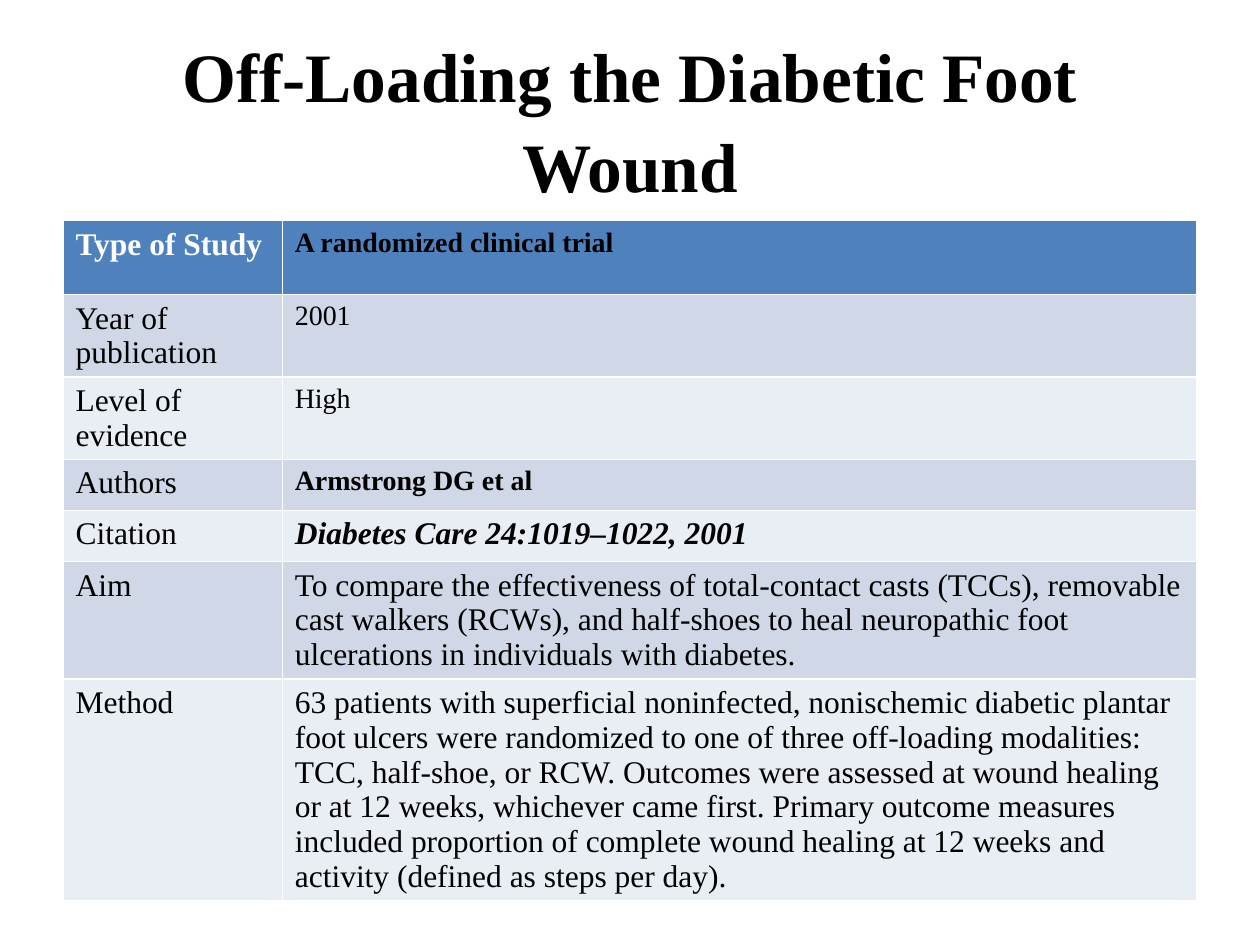
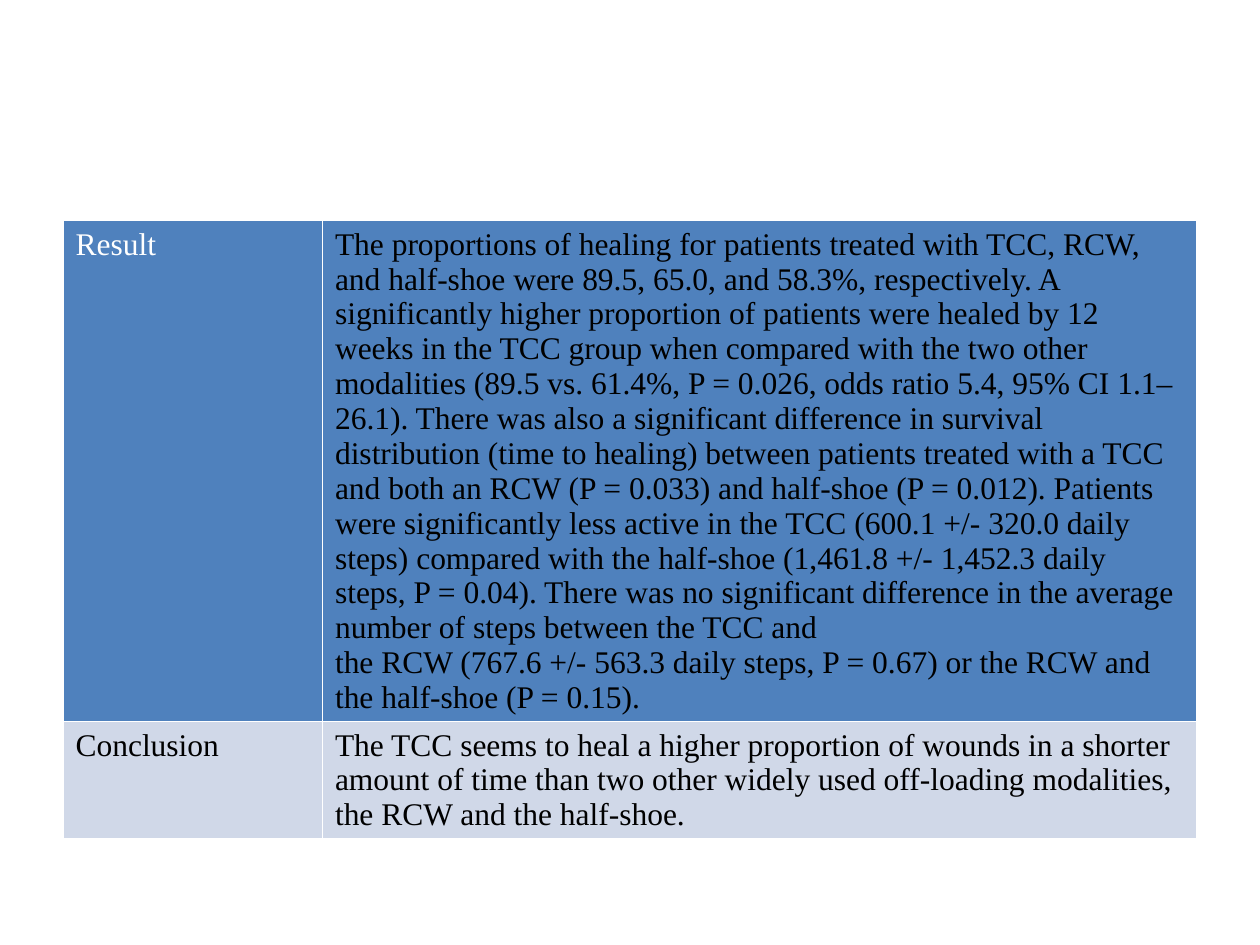
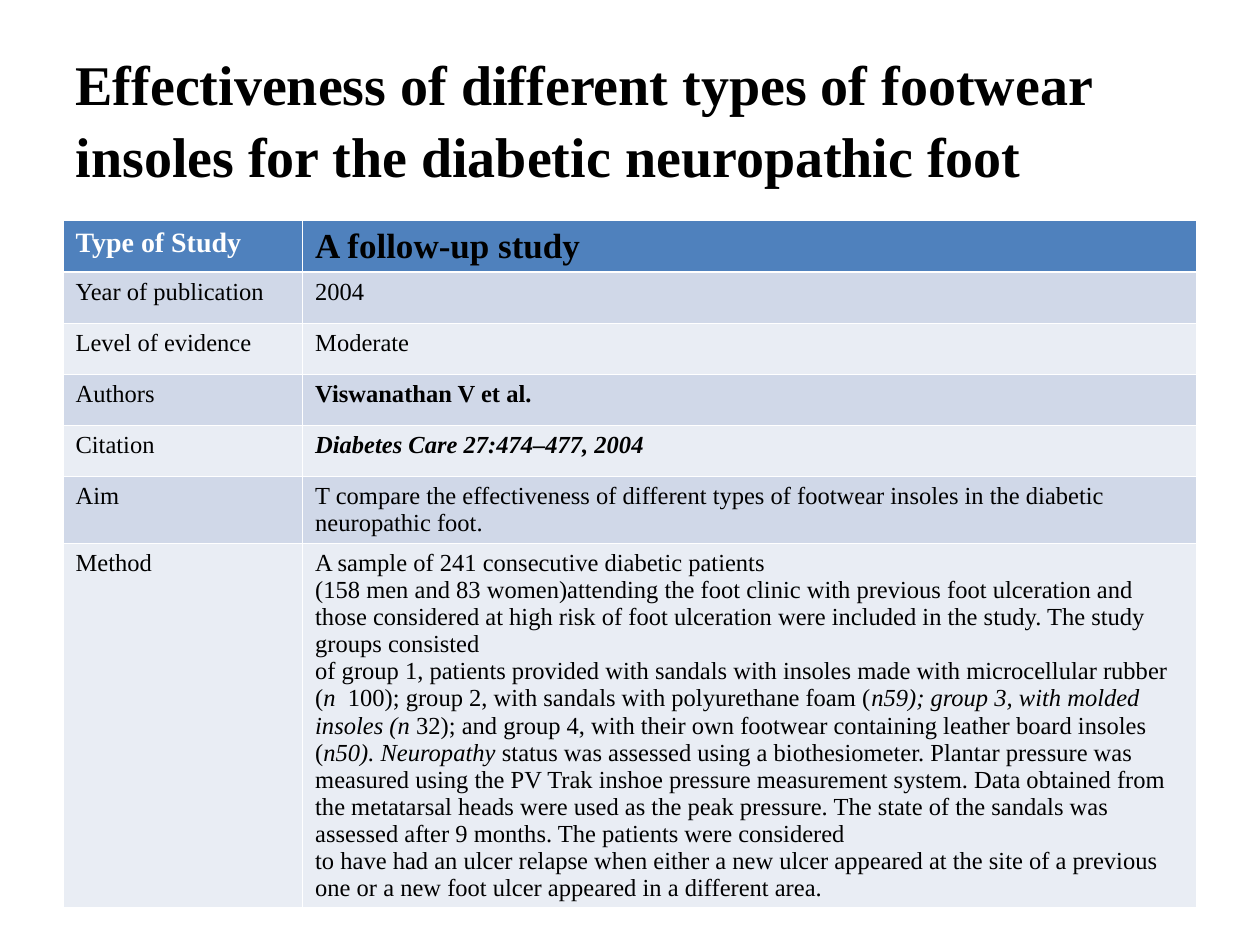
from pptx import Presentation
from pptx.dml.color import RGBColor
from pptx.enum.text import MSO_ANCHOR, MSO_AUTO_SIZE, PP_ALIGN
from pptx.util import Cm, Pt

CENTER, LEFT = PP_ALIGN.CENTER, PP_ALIGN.LEFT
MIDDLE, NO_FIT = MSO_ANCHOR.MIDDLE, MSO_AUTO_SIZE.NONE
TITLE_ONLY, BLANK = 5, 6
FONT = "Times New Roman"
ITALIC_MARK = "*"
BLACK, WHITE = "000000", "FFFFFF"
HEADER, BANDS = "4F81BD", ("D0D8E8", "E9EDF4")
MARGIN, WIDTH = 1.27, 22.86
TITLE_TOP, TITLE_HEIGHT, TABLE_TOP = 0.76, 3.18, 4.45
ROW = 1.03

BOLD = {"bold": True}
CITATION = {"bold": True, "italic": True}

RESULT = [
    "The proportions of healing for patients treated with TCC, RCW, and half-shoe "
    "were 89.5, 65.0, and 58.3%, respectively. A significantly higher proportion of "
    "patients were healed by 12 weeks in the TCC group when compared with the two "
    "other modalities (89.5 vs. 61.4%, P = 0.026, odds ratio 5.4, 95% CI 1.1–26.1). "
    "There was also a significant difference in survival distribution (time to "
    "healing) between patients treated with a TCC and both an RCW (P = 0.033) and "
    "half-shoe (P = 0.012). Patients were significantly less active in the TCC "
    "(600.1 +/- 320.0 daily steps) compared with the half-shoe (1,461.8 +/- 1,452.3 "
    "daily steps, P = 0.04). There was no significant difference in the average "
    "number of steps between the TCC and",
    "the RCW (767.6 +/- 563.3 daily steps, P = 0.67) or the RCW and the half-shoe "
    "(P = 0.15).",
]
CONCLUSION = [
    "The TCC seems to heal a higher proportion of wounds in a shorter",
    "amount of time than two other widely used off-loading modalities, the RCW and "
    "the half-shoe.",
]
INSOLE_METHOD = [
    "A sample of 241 consecutive diabetic patients",
    "(158 men and 83 women)attending the foot clinic with previous foot ulceration "
    "and those considered at high risk of foot ulceration were included in the "
    "study. The study groups consisted",
    "of group 1, patients provided with sandals with insoles made with microcellular "
    "rubber (*n  *100); group 2, with sandals with polyurethane foam (*n59); group 3, "
    "with molded insoles (n *32); and group 4, with their own footwear containing "
    "leather board insoles (*n50). Neuropathy *status was assessed using a "
    "biothesiometer. Plantar pressure was measured using the PV Trak inshoe pressure "
    "measurement system. Data obtained from the metatarsal heads were used as the "
    "peak pressure. The state of the sandals was assessed after 9 months. The "
    "patients were considered",
    "to have had an ulcer relapse when either a new ulcer appeared at the site of a "
    "previous one or a new foot ulcer appeared in a different area.",
]

SLIDES = [
    {
        "title": ("Off-Loading the Diabetic Foot Wound", 39.6, CENTER),
        "label_width": 4.42, "size": 18, "header": BOLD,
        "rows": [
            ("Type of Study", ["A randomized clinical trial"], 1.49, {"size": 16}),
            ("Year of publication", ["2001"], 1.65, {"size": 16}),
            ("Level of evidence", ["High"], 1.65, {"size": 16}),
            ("Authors", ["Armstrong DG et al"], ROW, {"size": 16, **BOLD}),
            ("Citation", ["Diabetes Care 24:1019–1022, 2001"], ROW, CITATION),
            ("Aim", ["To compare the effectiveness of total-contact casts (TCCs), "
                     "removable cast walkers (RCWs), and half-shoes to heal "
                     "neuropathic foot ulcerations in individuals with diabetes."],
             2.35, {}),
            ("Method", ["63 patients with superficial noninfected, nonischemic "
                        "diabetic plantar foot ulcers were randomized to one of three "
                        "off-loading modalities: TCC, half-shoe, or RCW. Outcomes were "
                        "assessed at wound healing or at 12 weeks, whichever came "
                        "first. Primary outcome measures included proportion of "
                        "complete wound healing at 12 weeks and activity (defined as "
                        "steps per day)."], 4.46, {}),
        ],
    },
    {
        "title": None,
        "label_width": 5.23, "size": 18, "header": {},
        "rows": [
            ("Result", RESULT, 10.08, {}),
            ("Conclusion", CONCLUSION, 2.35, {}),
        ],
    },
    {
        "title": ("Effectiveness of different types of footwear insoles for the "
                  "diabetic neuropathic foot", 32, LEFT),
        "label_width": 4.83, "size": 14, "header": {"size": 16, **BOLD},
        "rows": [
            ("Type of Study", ["A follow-up study"], ROW, {"size": 20}),
            ("Year of publication", ["2004"], ROW, {}),
            ("Level of evidence", ["Moderate"], ROW, {}),
            ("Authors", ["Viswanathan V et al."], ROW, BOLD),
            ("Citation", ["Diabetes Care 27:474–477, 2004"], ROW, CITATION),
            ("Aim", ["T compare the effectiveness of different types of footwear "
                     "insoles in the diabetic neuropathic foot."], 1.34, {}),
            ("Method", INSOLE_METHOD, 7.34, {}),
        ],
    },
]


def rgb(value):
    return RGBColor.from_string(value)


def write(tf, paragraphs, size=18, color=BLACK, bold=False, italic=False,
          align=LEFT, spacing=None):
    for i, text in enumerate(paragraphs):
        p = tf.add_paragraph() if i else tf.paragraphs[0]
        p.alignment = align
        if spacing:
            p.line_spacing = spacing
        for j, part in enumerate(text.split(ITALIC_MARK)):
            r = p.add_run()
            r.text = part
            r.font.name = FONT
            r.font.size = Pt(size)
            r.font.bold = bold
            r.font.italic = italic or j % 2 == 1
            r.font.color.rgb = rgb(color)


def add_title(s, text, size, align):
    sp = s.shapes.title
    sp.left, sp.top = Cm(MARGIN), Cm(TITLE_TOP)
    sp.width, sp.height = Cm(WIDTH), Cm(TITLE_HEIGHT)
    tf = sp.text_frame
    tf.word_wrap = True
    tf.auto_size = NO_FIT
    tf.vertical_anchor = MIDDLE
    write(tf, [text], size=size, bold=True, align=align, spacing=1.08)


def add_study_table(s, rows, label_width, size, header):
    height = sum(row[2] for row in rows)
    table = s.shapes.add_table(len(rows), 2, Cm(MARGIN), Cm(TABLE_TOP),
                               Cm(WIDTH), Cm(height)).table
    table.columns[0].width = Cm(label_width)
    table.columns[1].width = Cm(WIDTH - label_width)
    for i, (label, value, row_height, value_format) in enumerate(rows):
        table.rows[i].height = Cm(row_height)
        base = {"size": size, **({} if i else header)}
        label_color = BLACK if i else WHITE
        formats = ({**base, "color": label_color}, {**base, **value_format})
        for j, paragraphs in enumerate(([label], value)):
            cell = table.cell(i, j)
            cell.fill.solid()
            cell.fill.fore_color.rgb = rgb(BANDS[(i - 1) % 2] if i else HEADER)
            write(cell.text_frame, paragraphs, **formats[j])


def main():
    prs = Presentation()
    prs.slide_width, prs.slide_height = Cm(25.4), Cm(19.05)
    for content in SLIDES:
        title = content["title"]
        s = prs.slides.add_slide(prs.slide_layouts[TITLE_ONLY if title else BLANK])
        if title:
            add_title(s, *title)
        add_study_table(s, content["rows"], content["label_width"],
                        content["size"], content["header"])
    prs.save("out.pptx")


if __name__ == "__main__":
    main()
